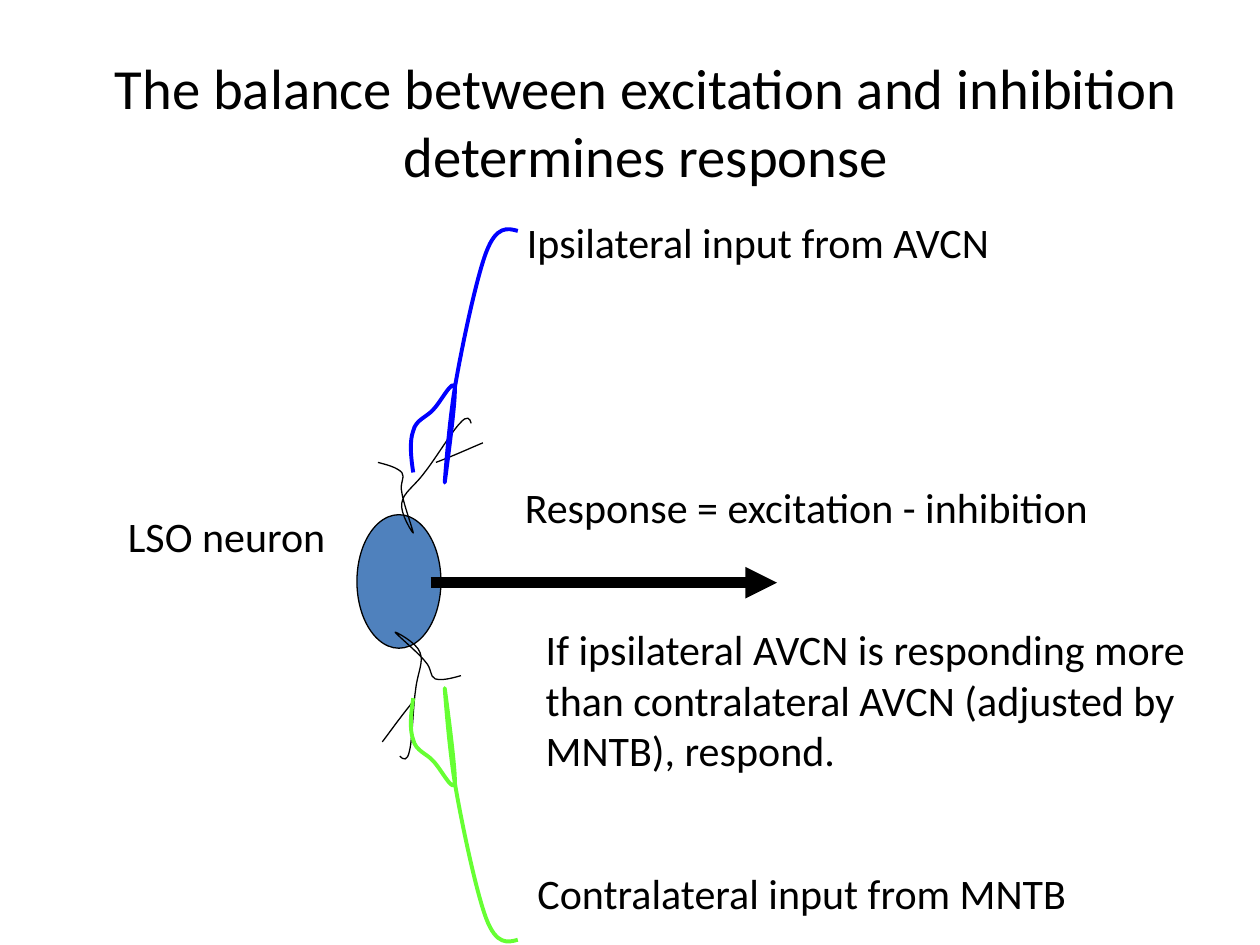
from lxml import etree
from pptx import Presentation
from pptx import util as u
from pptx.dml.color import RGBColor
from pptx.enum import shapes, text
from pptx.oxml.ns import qn

COLUMNS, ROWS = 100, 75
BLACK, BLUE, GREEN, NEURON = "000000", "0000FF", "66FF33", "4F81BD"

# Each curve is a start point followed by cubic Bezier control points, in grid units.
DENDRITE = [
    (30, 36.7),
    (30.8, 36.9), (31.5, 37.1), (31.9, 37.5),
    (32.2, 37.9), (31.7, 38.3), (31.9, 39.1),
    (32, 39.9), (32.8, 42.1), (32.8, 42.3),
    (32.8, 42.4), (31.7, 40.7), (31.9, 39.9),
    (32, 39.1), (32.9, 38.6), (33.7, 37.5),
    (34.5, 36.5), (35.9, 34.2), (36.5, 33.6),
    (37.1, 32.9), (37.3, 33.2), (37.4, 33.6),
]
BRANCH = [(34.6, 36.7), (36.2, 36.1), (37.7, 35.4), (38.33, 35.15)]
AXON = [
    (32.8, 37.5),
    (32.6, 36.2), (32.5, 35), (32.8, 34.2),
    (33, 33.3), (33.9, 33.1), (34.4, 32.5),
    (35, 31.9), (36, 29.9), (36.1, 30.8),
    (36.2, 31.8), (35.3, 38.3), (35.3, 38.3),
    (35.3, 38.3), (35.6, 33.9), (36.1, 30.8),
    (36.6, 27.8), (37.8, 22.1), (38.6, 20),
    (39.4, 17.9), (40.3, 18.1), (41.1, 18.33),
]
MIRROR_ROWS = 92.92


def color(hex_string):
    return RGBColor.from_string(hex_string)


def write(frame, words, size=24, ink=BLACK, font="Calibri", align=None):
    paragraph = frame.paragraphs[0]
    paragraph.alignment = align
    run = paragraph.add_run()
    run.text = words
    run.font.size = u.Pt(size)
    run.font.name = font
    run.font.color.rgb = color(ink)


def bend(shape):
    """Regroup each three straight segments of a freeform as one cubic Bezier."""
    lines = list(shape._element.iter(qn("a:lnTo")))
    for i in range(0, len(lines), 3):
        bezier = etree.Element(qn("a:cubicBezTo"))
        lines[i].addprevious(bezier)
        for line in lines[i:i + 3]:
            bezier.append(line[0])
            line.getparent().remove(line)


class Diagram:
    """Holds the slide and its grid; positions are columns and rows."""

    def __init__(self, deck):
        self.slide = deck.slides.add_slide(deck.slide_layouts[5])
        self.column = deck.slide_width / COLUMNS
        self.row = deck.slide_height / ROWS

    def point(self, column, row):
        return u.Emu(round(column * self.column)), u.Emu(round(row * self.row))

    def box(self, column, row, width, height):
        return *self.point(column, row), *self.point(width, height)

    def stroke(self, shape, ink, width):
        shape.line.color.rgb = color(ink)
        shape.line.width = u.Pt(width)

    def title(self, words, *place):
        title = self.slide.shapes.title
        title.left, title.top, title.width, title.height = self.box(*place)
        title.text_frame.auto_size = text.MSO_AUTO_SIZE.NONE
        title.text_frame.vertical_anchor = text.MSO_ANCHOR.MIDDLE
        write(title.text_frame, words, size=32.4, align=text.PP_ALIGN.CENTER)

    def label(self, words, *place, wrap=False):
        frame = self.slide.shapes.add_textbox(*self.box(*place)).text_frame
        frame.word_wrap = wrap
        frame.auto_size = text.MSO_AUTO_SIZE.SHAPE_TO_FIT_TEXT
        write(frame, words)

    def cell_body(self, *place):
        body = self.slide.shapes.add_shape(shapes.MSO_SHAPE.OVAL, *self.box(*place))
        body.shadow.inherit = False
        body.fill.solid()
        body.fill.fore_color.rgb = color(NEURON)
        self.stroke(body, BLACK, 0.75)

    def curve(self, points, ink=BLACK, width=0.75):
        start, *controls = [self.point(*p) for p in points]
        builder = self.slide.shapes.build_freeform(*start)
        builder.add_line_segments(controls, close=False)
        curve = builder.convert_to_shape()
        bend(curve)
        curve.shadow.inherit = False
        curve.fill.background()
        self.stroke(curve, ink, width)
        return curve

    def turned_curve(self, points, column, row, angle):
        """Draw a curve, move its unturned corner, then rotate it."""
        curve = self.curve(points)
        curve.left, curve.top = self.point(column, row)
        curve.rotation = angle

    def arrow(self, start, end, ink=BLACK, width=6):
        arrow = self.slide.shapes.add_connector(
            shapes.MSO_CONNECTOR.STRAIGHT, *self.point(*start), *self.point(*end))
        self.stroke(arrow, ink, width)
        etree.SubElement(arrow.line._get_or_add_ln(), qn("a:tailEnd"), type="triangle")
        etree.SubElement(arrow._element.spPr, qn("a:effectLst"))


def main():
    deck = Presentation()
    deck.slide_width, deck.slide_height = u.Inches(10), u.Inches(7.5)
    diagram = Diagram(deck)
    diagram.title("The balance between excitation and inhibition determines response",
                  6.67, 3.33, 89.17, 12.5)

    diagram.cell_body(28.33, 40.85, 6.67, 10.6)
    diagram.curve(DENDRITE)
    diagram.curve(BRANCH)
    diagram.turned_curve(DENDRITE, 29.2, 49.9, 150)
    diagram.turned_curve(BRANCH, 29.7, 56.5, 150)
    diagram.curve(AXON, BLUE, 2.25)
    diagram.curve([(x, MIRROR_ROWS - y) for x, y in AXON], GREEN, 2.25)
    diagram.arrow((34.17, 46.25), (61.67, 46.25))

    diagram.label("Response = excitation - inhibition", 40.67, 37.7, 47.2, 5)
    diagram.label("Ipsilateral input from AVCN", 40.83, 16.67, 39.1, 5)
    diagram.label("Contralateral input from MNTB", 41.67, 68.33, 44.9, 5)
    diagram.label("LSO neuron", 9.17, 40, 18.4, 5)
    diagram.label("If ipsilateral AVCN is responding more than contralateral AVCN "
                  "(adjusted by MNTB), respond.", 42.33, 49, 54.3, 13.1, wrap=True)
    deck.save("out.pptx")


if __name__ == "__main__":
    main()
